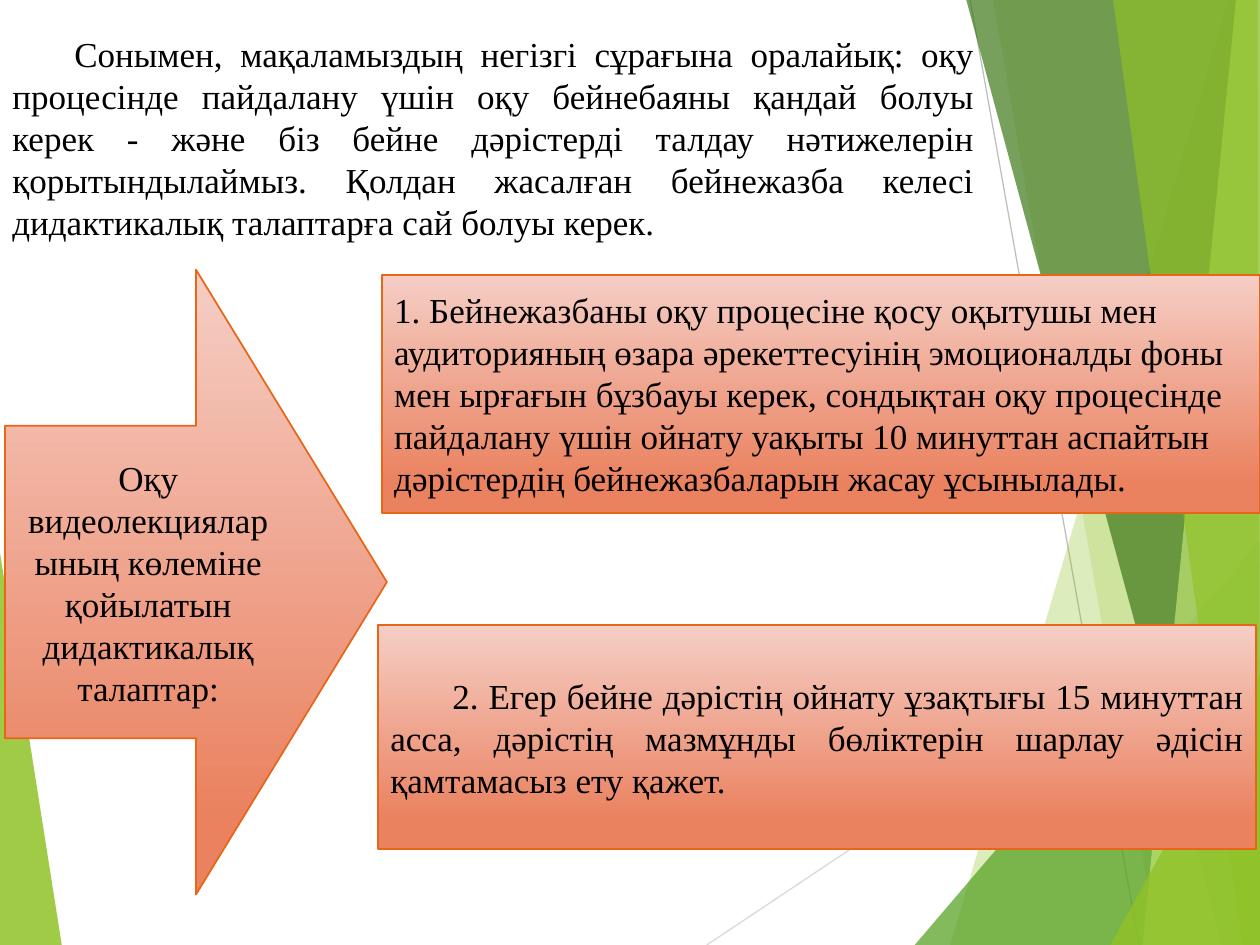
import pptx
import pptx.dml.color
import pptx.enum.shapes
import pptx.enum.text
import pptx.oxml
import pptx.oxml.ns
import pptx.util

Pt = pptx.util.Pt
ALIGN = pptx.enum.text.PP_ALIGN
SHAPE = pptx.enum.shapes.MSO_SHAPE

COLOURS = {
    "lime": "90C226",
    "pale_lime": "C0E474",
    "green": "54A021",
    "dark_green": "3F7819",
    "light_grey": "D9D9D9",
    "grey": "BFBFBF",
    "peach": "F5CEC5",
    "coral": "EA815F",
    "orange": "E76618",
    "black": "000000",
}
FONT = {"name": "Times New Roman", "size": Pt(20)}
CENTRED = {"alignment": ALIGN.CENTER}
LEFT = {"alignment": ALIGN.LEFT}
JUSTIFIED = {"alignment": ALIGN.JUSTIFY, "space_after": Pt(8)}
FIRST_LINE_INDENT = Pt(35.4)

WIDTH, HEIGHT = 720, 540

FACETS = [
    ("lime", 85, [(0, 316), (35.3, HEIGHT), (0, HEIGHT)]),
    ("lime", 30, [(702, 0), (543, HEIGHT), (WIDTH, HEIGHT), (WIDTH, 0)]),
    ("lime", 20, [(567.4, 0), (661.7, HEIGHT), (WIDTH, HEIGHT), (WIDTH, 0)]),
    ("green", 72, [(522.7, HEIGHT), (WIDTH, 308.9), (WIDTH, HEIGHT)]),
    ("dark_green", 70, [(552.2, 0), (698.4, HEIGHT), (WIDTH, HEIGHT), (WIDTH, 0)]),
    ("pale_lime", 70, [(706.3, 0), (653, HEIGHT), (WIDTH, HEIGHT), (WIDTH, 0)]),
    ("lime", 65, [(636, 0), (709.9, HEIGHT), (WIDTH, HEIGHT), (718.6, 0)]),
    ("lime", 80, [(634.5, HEIGHT), (WIDTH, 385.2), (WIDTH, HEIGHT)]),
]

INTRODUCTION = (
    "Сонымен, мақаламыздың негізгі сұрағына оралайық: оқу процесінде пайдалану "
    "үшін оқу бейнебаяны қандай болуы керек - және біз бейне дәрістерді талдау "
    "нәтижелерін қорытындылаймыз. Қолдан жасалған бейнежазба келесі "
    "дидактикалық талаптарға сай болуы керек."
)
TOPIC = "Оқу видеолекцияларының көлеміне қойылатын дидактикалық талаптар:"
FIRST_RULE = (
    "1. Бейнежазбаны оқу процесіне қосу оқытушы мен аудиторияның өзара "
    "әрекеттесуінің эмоционалды фоны мен ырғағын бұзбауы керек, сондықтан оқу "
    "процесінде пайдалану үшін ойнату уақыты 10 минуттан аспайтын дәрістердің "
    "бейнежазбаларын жасау ұсынылады."
)
SECOND_RULE = (
    "2. Егер бейне дәрістің ойнату ұзақтығы 15 минуттан асса, дәрістің мазмұнды "
    "бөліктерін шарлау әдісін қамтамасыз ету қажет."
)


def colour(name):
    return pptx.dml.color.RGBColor.from_string(COLOURS[name])


class SlideBuilder:
    def __init__(self, slide):
        self.slide = slide

    def apply(self, target, values):
        for name, value in values.items():
            setattr(target, name, value)

    def fill_text(self, shape, text, style, anchor, indented=False):
        frame = shape.text_frame
        self.apply(frame, {"word_wrap": True, "vertical_anchor": anchor})
        paragraph = frame.paragraphs[0]
        self.apply(paragraph, style)
        if indented:
            properties = paragraph._p.get_or_add_pPr()
            properties.set("marL", "0")
            properties.set("indent", str(FIRST_LINE_INDENT))
        run = paragraph.add_run()
        run.text = text
        self.apply(run.font, FONT)
        run.font.color.rgb = colour("black")

    def facet(self, fill, opacity, points):
        corners = [(Pt(x), Pt(y)) for x, y in points]
        builder = self.slide.shapes.build_freeform(*corners[0])
        builder.add_line_segments(corners[1:], close=True)
        shape = builder.convert_to_shape()
        shape.shadow.inherit = False
        shape.fill.solid()
        shape.fill.fore_color.rgb = colour(fill)
        shape.line.fill.background()
        tint = shape._element.spPr.find(".//" + pptx.oxml.ns.qn("a:srgbClr"))
        alpha = pptx.oxml.parse_xml(
            f'<a:alpha {pptx.oxml.ns.nsdecls("a")} val="{opacity * 1000}"/>'
        )
        tint.append(alpha)

    def line(self, stroke, start, end):
        connector = self.slide.shapes.add_connector(
            pptx.enum.shapes.MSO_CONNECTOR.STRAIGHT, *map(Pt, start + end)
        )
        connector.line.color.rgb = colour(stroke)
        connector.line.width = Pt(0.75)
        connector._element.spPr.append(
            pptx.oxml.parse_xml(f'<a:effectLst {pptx.oxml.ns.nsdecls("a")}/>')
        )

    def text(self, box, text, style, indented=False):
        shape = self.slide.shapes.add_textbox(*map(Pt, box))
        self.fill_text(shape, text, style, pptx.enum.text.MSO_ANCHOR.TOP, indented)

    def panel(self, kind, box, text, style, indented=False):
        shape = self.slide.shapes.add_shape(kind, *map(Pt, box))
        shape.shadow.inherit = False
        shape.fill.gradient()
        shape.fill.gradient_angle = 270
        stops = [("peach", 0), ("coral", 0.88)]
        for stop, (name, position) in zip(shape.fill.gradient_stops, stops):
            stop.color.rgb = colour(name)
            stop.position = position
        shape.line.color.rgb = colour("orange")
        shape.line.width = Pt(1)
        self.fill_text(shape, text, style, pptx.enum.text.MSO_ANCHOR.MIDDLE, indented)


def main():
    presentation = pptx.Presentation()
    presentation.slide_width = Pt(WIDTH)
    presentation.slide_height = Pt(HEIGHT)
    builder = SlideBuilder(presentation.slides.add_slide(presentation.slide_layouts[6]))

    builder.facet(*FACETS[0])
    builder.line("light_grey", (403.9, HEIGHT), (WIDTH, 329))
    builder.line("grey", (554.4, 0), (650.9, HEIGHT))
    for facet in FACETS[1:]:
        builder.facet(*facet)

    builder.text((0, 15.1, 563.8, 128.2), INTRODUCTION, JUSTIFIED, indented=True)
    builder.panel(SHAPE.RIGHT_ARROW, (2.9, 154.1, 218.2, 357.1), TOPIC, CENTRED)
    builder.panel(SHAPE.RECTANGLE, (218.2, 157, 501.8, 136.1), FIRST_RULE, LEFT)
    builder.panel(
        SHAPE.RECTANGLE, (216, 357.1, 501.8, 128.2), SECOND_RULE, JUSTIFIED, indented=True
    )
    presentation.save("out.pptx")


if __name__ == "__main__":
    main()
